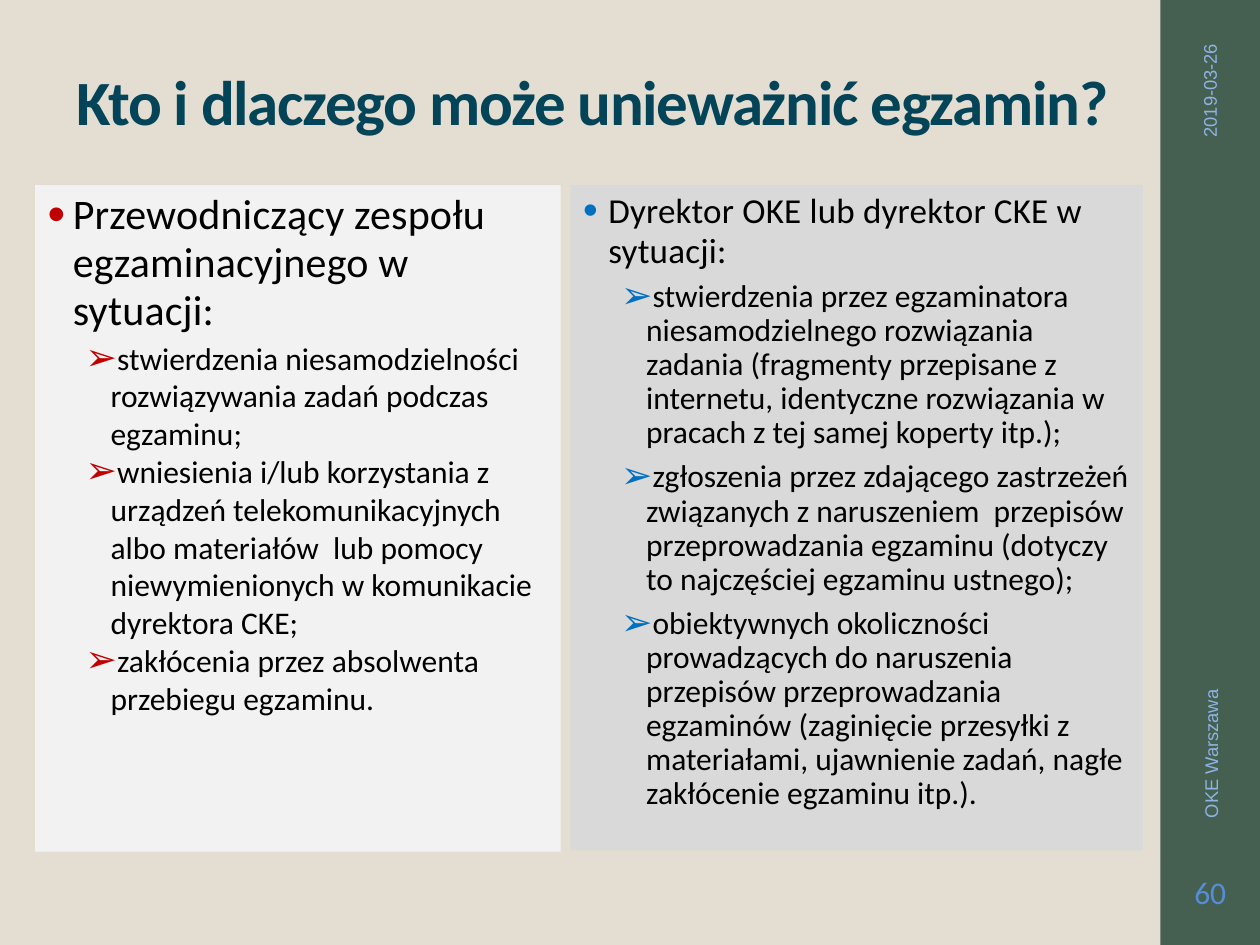
from lxml import etree
from pptx import Presentation
from pptx.dml.color import RGBColor
from pptx.enum.shapes import MSO_SHAPE
from pptx.enum.text import MSO_ANCHOR, PP_ALIGN
from pptx.oxml.ns import qn
from pptx.util import Inches, Pt

RECTANGLE = MSO_SHAPE.RECTANGLE
TOP, MIDDLE, BOTTOM = MSO_ANCHOR.TOP, MSO_ANCHOR.MIDDLE, MSO_ANCHOR.BOTTOM
LEFT, CENTER, RIGHT = PP_ALIGN.LEFT, PP_ALIGN.CENTER, PP_ALIGN.RIGHT

THEME = {
    "background": "E3DED1", "sidebar": "455F51", "title": "044458", "text": "000000",
    "footer": "8EB4E3", "number": "558ED5",
    "font": "Calibri", "footer_font": "Arial",
    "title_size": 36, "item_size": 18, "footer_size": 10.5, "number_size": 18,
}


def write(para, text, size, color, font=THEME["font"], bold=False, spacing=0):
    """Add a run to para; spacing is the letter spacing in points."""
    span = para.add_run()
    span.text = text
    for name, value in {"size": Pt(size), "name": font, "bold": bold}.items():
        setattr(span.font, name, value)
    span.font.color.rgb = RGBColor.from_string(color)
    if spacing:
        span.font._element.set("spc", str(round(spacing * 100)))


def add_bullet(para, character, color, margin):
    properties = para._p.get_or_add_pPr()
    properties.set("marL", str(Inches(margin)))
    properties.set("indent", str(Inches(-0.2)))
    bullet_color = etree.SubElement(properties, qn("a:buClr"))
    etree.SubElement(bullet_color, qn("a:srgbClr"), val=color)
    etree.SubElement(properties, qn("a:buSzPct"), val="120000")
    etree.SubElement(properties, qn("a:buFont"), typeface="Arial")
    etree.SubElement(properties, qn("a:buChar"), char=character)


deck = Presentation()
deck.slide_width, deck.slide_height = Inches(10), Inches(7.5)
page = deck.slides.add_slide(deck.slide_layouts[6])
page.background.fill.solid()
page.background.fill.fore_color.rgb = RGBColor.from_string(THEME["background"])

sidebar = page.shapes.add_shape(RECTANGLE, Inches(9.21), 0, Inches(0.8), Inches(7.5))
sidebar.shadow.inherit = False
sidebar.fill.solid()
sidebar.fill.fore_color.rgb = RGBColor.from_string(THEME["sidebar"])
sidebar.line.fill.background()

# Title
title = page.shapes.add_textbox(Inches(0.51), Inches(0.4), Inches(8.47), Inches(0.75))
title.text_frame.word_wrap = True
title.text_frame.vertical_anchor = BOTTOM
title_para = title.text_frame.paragraphs[0]
title_para.line_spacing = 0.9
write(title_para, "Kto i dlaczego może unieważnić egzamin?",
      THEME["title_size"], THEME["title"], bold=True, spacing=-0.7)

# Two panels: who may annul the exam, and in which situations
panels = [
    {
        "place": (0.28, 1.47, 4.17, 5.29), "fill": "F2F2F2", "accent": "C00000",
        "heading": "Przewodniczący zespołu egzaminacyjnego w sytuacji:",
        "heading_size": 24,
        "item_format": {"line_spacing": 1.0, "space_before": Pt(0), "space_after": Pt(0)},
        "items": [
            "stwierdzenia niesamodzielności rozwiązywania zadań podczas egzaminu;",
            "wniesienia i/lub korzystania z urządzeń telekomunikacyjnych albo materiałów  lub "
            "pomocy niewymienionych w komunikacie dyrektora CKE;",
            "zakłócenia przez absolwenta przebiegu egzaminu.",
        ],
    },
    {
        "place": (4.53, 1.47, 4.54, 5.28), "fill": "D9D9D9", "accent": "0070C0",
        "heading": "Dyrektor OKE lub dyrektor CKE w sytuacji:",
        "heading_size": 20,
        "item_format": {"line_spacing": 0.9, "space_before": Pt(3), "space_after": Pt(3)},
        "items": [
            "stwierdzenia przez egzaminatora niesamodzielnego rozwiązania zadania (fragmenty "
            "przepisane z internetu, identyczne rozwiązania w pracach z tej samej koperty itp.);",
            "zgłoszenia przez zdającego zastrzeżeń związanych z naruszeniem  przepisów "
            "przeprowadzania egzaminu (dotyczy to najczęściej egzaminu ustnego);",
            "obiektywnych okoliczności prowadzących do naruszenia przepisów przeprowadzania "
            "egzaminów (zaginięcie przesyłki z materiałami, ujawnienie zadań, nagłe "
            "zakłócenie egzaminu itp.).",
        ],
    },
]
for panel in panels:
    box = page.shapes.add_shape(RECTANGLE, *map(Inches, panel["place"]))
    box.shadow.inherit = False
    box.fill.solid()
    box.fill.fore_color.rgb = RGBColor.from_string(panel["fill"])
    box.line.fill.background()
    frame = box.text_frame
    frame.word_wrap = True
    frame.vertical_anchor = TOP

    heading = frame.paragraphs[0]
    heading.alignment = LEFT
    heading.line_spacing = 0.95
    heading.space_after = Pt(2)
    add_bullet(heading, "•", panel["accent"], 0.2)
    write(heading, panel["heading"], panel["heading_size"], THEME["text"], spacing=0.1)

    for item in panel["items"]:
        para = frame.add_paragraph()
        para.level = 1
        para.alignment = LEFT
        for name, value in panel["item_format"].items():
            setattr(para, name, value)
        add_bullet(para, "➢", panel["accent"], 0.5)
        write(para, item, THEME["item_size"], THEME["text"])

# Date, footer and page number on the sidebar
sidebar_texts = [
    ("2019-03-26", (8.56, 1.14, 2.08, 0.3), 270, RIGHT, 0.1, "footer", THEME["footer_font"]),
    ("OKE Warszawa", (7.65, 4.48, 3.92, 0.3), 270, LEFT, 0.1, "footer", THEME["footer_font"]),
    ("60", (9.23, 6.75, 0.75, 0.65), 0, CENTER, 0.03, "number", THEME["font"]),
]
for text, place, rotation, alignment, inset, style, font in sidebar_texts:
    box = page.shapes.add_textbox(*map(Inches, place))
    box.rotation = rotation
    frame = box.text_frame
    frame.word_wrap = True
    frame.vertical_anchor = MIDDLE
    frame.margin_left = frame.margin_right = Inches(inset)
    frame.paragraphs[0].alignment = alignment
    write(frame.paragraphs[0], text, THEME[style + "_size"], THEME[style], font)

deck.save("out.pptx")
